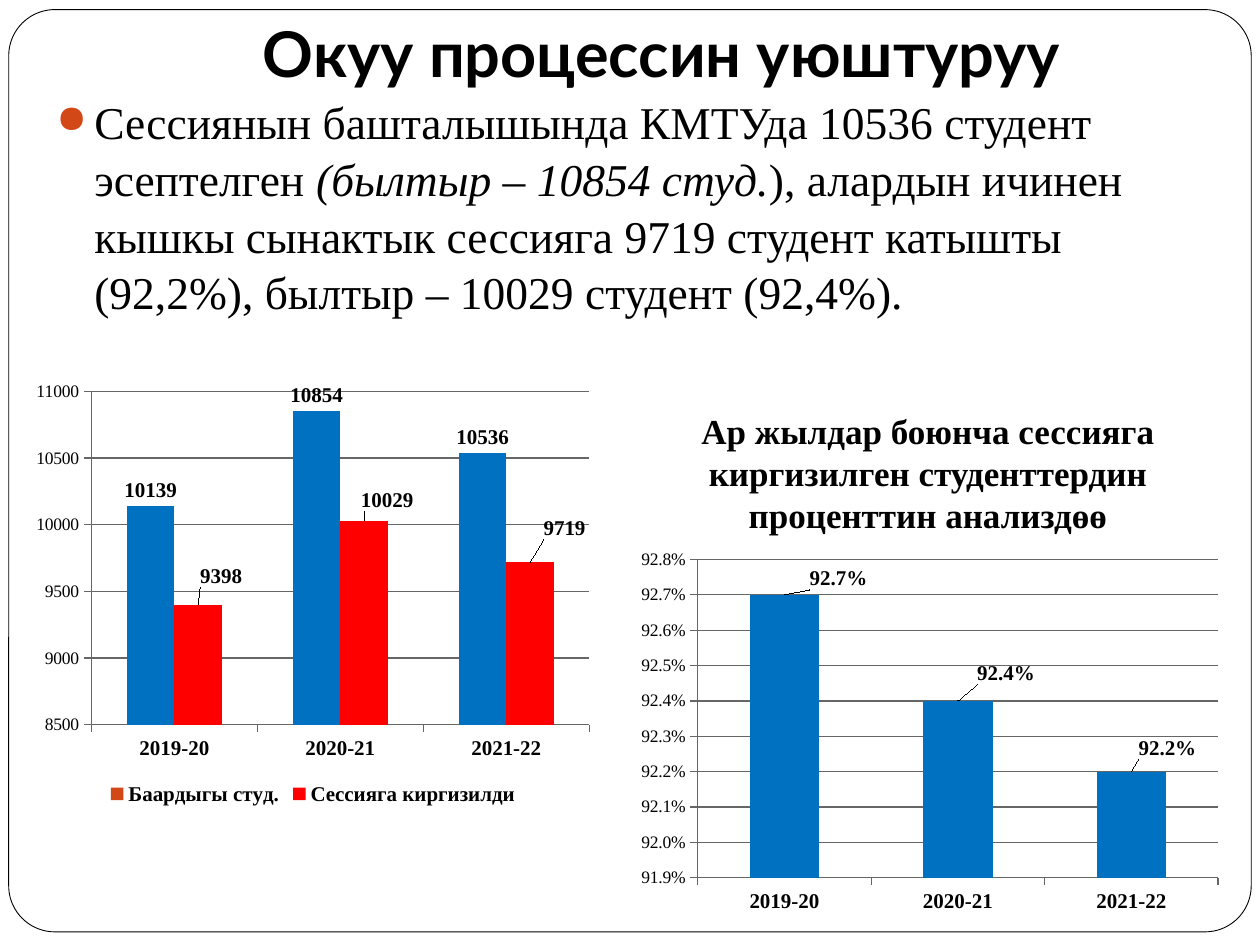
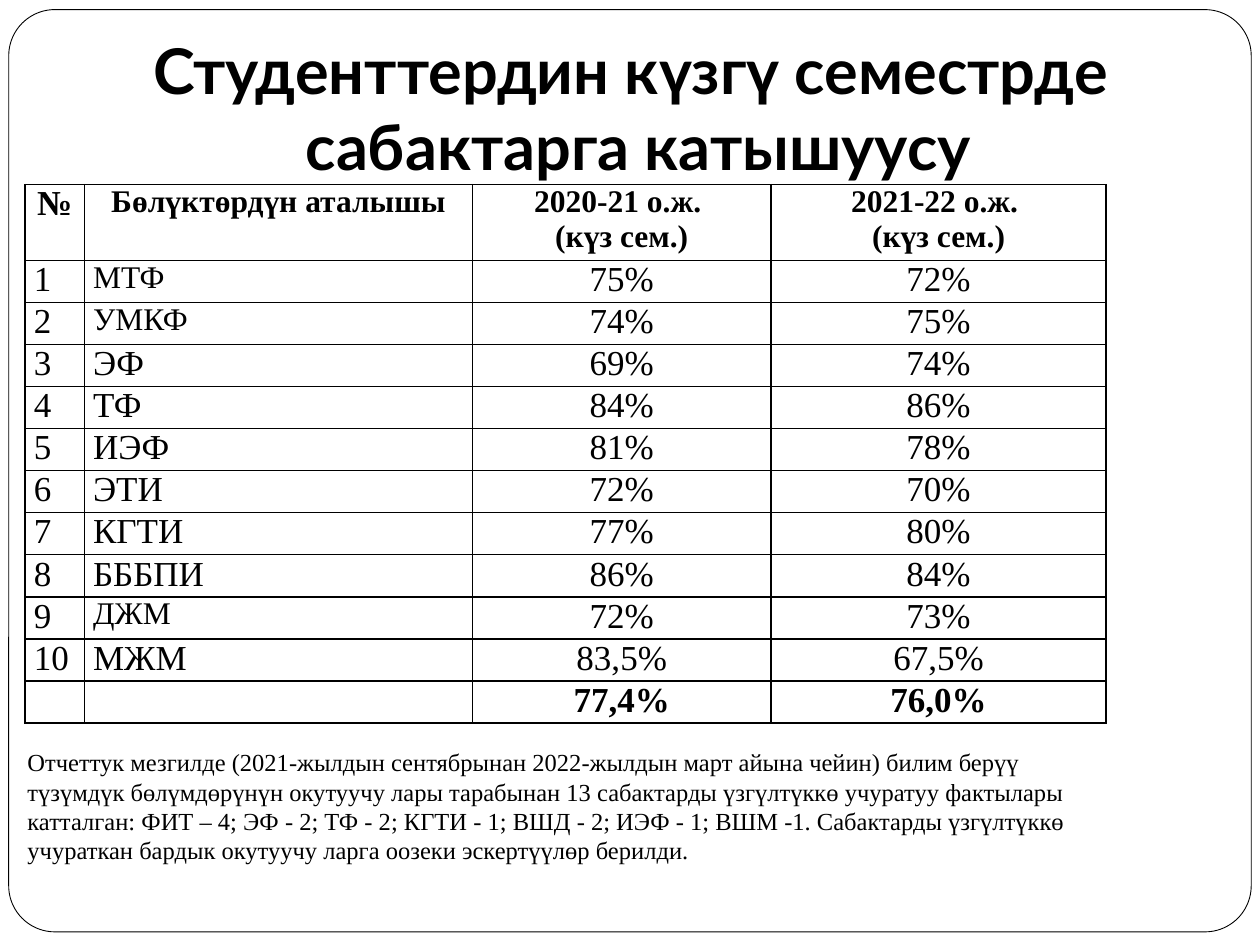
from lxml import etree
from pptx import Presentation
from pptx.chart.data import CategoryChartData
from pptx.dml.color import RGBColor
from pptx.enum.chart import XL_CHART_TYPE, XL_LABEL_POSITION, XL_LEGEND_POSITION, XL_TICK_MARK
from pptx.enum.shapes import MSO_SHAPE
from pptx.enum.text import MSO_ANCHOR, PP_ALIGN
from pptx.oxml import parse_xml
from pptx.oxml.ns import nsdecls, qn
from pptx.util import Pt

COLUMNS = XL_CHART_TYPE.COLUMN_CLUSTERED
ABOVE_BAR = XL_LABEL_POSITION.OUTSIDE_END
LEGEND_BOTTOM = XL_LEGEND_POSITION.BOTTOM
TICK_OUT, TICK_NONE = XL_TICK_MARK.OUTSIDE, XL_TICK_MARK.NONE
ROUNDED = MSO_SHAPE.ROUNDED_RECTANGLE
TOP, BOTTOM = MSO_ANCHOR.TOP, MSO_ANCHOR.BOTTOM
LEFT, CENTER, JUSTIFY = PP_ALIGN.LEFT, PP_ALIGN.CENTER, PP_ALIGN.JUSTIFY

BLACK = RGBColor(0x00, 0x00, 0x00)
WHITE = RGBColor(0xFF, 0xFF, 0xFF)
GREY = RGBColor(0x66, 0x66, 0x66)
BLUE = RGBColor(0x00, 0x70, 0xC0)
RED = RGBColor(0xFF, 0x00, 0x00)
ORANGE = RGBColor(0xD3, 0x48, 0x17)
TITLE_FONT, BODY_FONT = "Lato", "Times New Roman"

YEARS = ["2019-20", "2020-21", "2021-22"]
ATTENDANCE_COLUMNS = [33.84, 221.76, 170.64, 191.52]
ATTENDANCE_HEADER = ["№", "Бөлүктөрдүн аталышы", "2020-21 о.ж. \n(күз сем.)", "2021-22 о.ж. \n(күз сем.)"]
ATTENDANCE = [
    ("МТФ", "75%", "72%"),
    ("УМКФ", "74%", "75%"),
    ("ЭФ", "69%", "74%"),
    ("ТФ", "84%", "86%"),
    ("ИЭФ", "81%", "78%"),
    ("ЭТИ", "72%", "70%"),
    ("КГТИ", "77%", "80%"),
    ("БББПИ", "86%", "84%"),
    ("ДЖМ", "72%", "73%"),
    ("МЖМ", "83,5%", "67,5%"),
]
SMALLER_NAMES = {"МТФ", "УМКФ", "ДЖМ"}
AVERAGES = ["", "", "77,4%", "76,0%"]
NOTE = (
    "Отчеттук мезгилде (2021-жылдын сентябрынан 2022-жылдын март айына чейин) билим берүү\n"
    "түзүмдүк бөлүмдөрүнүн окутуучу лары тарабынан 13 сабактарды үзгүлтүккө учуратуу фактылары\n"
    "катталган: ФИТ – 4; ЭФ - 2; ТФ - 2; КГТИ - 1; ВШД - 2; ИЭФ - 1; ВШМ -1. Сабактарды үзгүлтүккө\n"
    "учураткан бардык окутуучу ларга оозеки эскертүүлөр берилди."
)


def set_font(font, size, bold=False, name=BODY_FONT):
    font.name, font.size, font.bold = name, Pt(size), bold
    font.color.rgb = BLACK


def format_text(frame, size, bold=False, align=LEFT, name=BODY_FONT):
    for para in frame.paragraphs:
        para.alignment = align
        set_font(para.font, size, bold, name)
        for span in para.runs:
            set_font(span.font, size, bold, name)


def add_text(page, place, text, size, bold=False, align=LEFT, name=BODY_FONT, anchor=TOP):
    frame = page.shapes.add_textbox(*map(Pt, place)).text_frame
    frame.word_wrap = True
    frame.vertical_anchor = anchor
    frame.text = text
    format_text(frame, size, bold, align, name)
    return frame


def add_page(deck, title, title_place):
    """Add a blank slide with the rounded frame and the title."""
    page = deck.slides.add_slide(deck.slide_layouts[6])
    border = page.shapes.add_shape(ROUNDED, Pt(5), Pt(5.5), Pt(710), Pt(527))
    border.adjustments[0] = 0.05
    border.shadow.inherit = False
    border.fill.solid()
    border.fill.fore_color.rgb = WHITE
    border.line.color.rgb = BLACK
    border.line.width = Pt(0.5)
    frame = add_text(page, title_place, title, 36, True, CENTER, TITLE_FONT, BOTTOM)
    frame.margin_bottom = Pt(7.2)
    return page


def add_bullet(para):
    props = para._p.get_or_add_pPr()
    props.set("marL", str(Pt(21.6)))
    props.set("indent", str(-Pt(21.6)))
    color = etree.SubElement(props, qn("a:buClr"))
    etree.SubElement(color, qn("a:srgbClr"), val=str(ORANGE))
    etree.SubElement(props, qn("a:buSzPct"), val="85000")
    etree.SubElement(props, qn("a:buChar"), char="●")


def add_session_summary(page):
    frame = add_text(page, (25.2, 49, 684, 150), "", 26)
    para = frame.paragraphs[0]
    para.space_before = Pt(5.8)
    para.line_spacing = 1.04
    pieces = [
        ("Сессиянын башталышында КМТУда 10536 студент эсептелген ", False),
        ("(былтыр – 10854 студ.", True),
        ("), алардын ичинен кышкы сынактык сессияга 9719 студент катышты "
         "(92,2%), былтыр – 10029 студент (92,4%).", False),
    ]
    for text, italic in pieces:
        span = para.add_run()
        span.text = text
        set_font(span.font, 26)
        span.font.italic = italic
    add_bullet(para)


def manual_layout(target="", **factors):
    """Build a c:layout element from fractions of the chart size."""
    parts = "".join(f'<c:{key} val="{value}"/>' for key, value in factors.items())
    return parse_xml(f'<c:layout {nsdecls("c")}><c:manualLayout>{target}{parts}</c:manualLayout></c:layout>')


def place_plot(chart, x, y, w, h):
    area = chart._chartSpace.chart.plotArea
    for old in area.findall(qn("c:layout")):
        area.remove(old)
    area.insert(0, manual_layout('<c:layoutTarget val="inner"/>',
                                 xMode="edge", yMode="edge", x=x, y=y, w=w, h=h))


def shift_labels(series, offsets):
    """Move each value label by a fraction of the chart size."""
    for index, (x, y) in enumerate(offsets):
        label = series.points[index].data_label
        set_font(label.font, 12, True)
        label.position = ABOVE_BAR
        element = series._element.find(qn("c:dLbls")).findall(qn("c:dLbl"))[index]
        element.find(qn("c:idx")).addnext(manual_layout(x=x, y=y))


def style_axes(chart, low, high, step, number_format):
    values, years = chart.value_axis, chart.category_axis
    values.minimum_scale, values.maximum_scale, values.major_unit = low, high, step
    values.tick_labels.number_format = number_format
    values.tick_labels.number_format_is_linked = False
    values.has_major_gridlines = True
    set_font(values.tick_labels.font, 10)
    set_font(years.tick_labels.font, 12, True)
    for axis in (values, years):
        axis.major_tick_mark, axis.minor_tick_mark = TICK_OUT, TICK_NONE
    for line in (values.format.line, years.format.line, values.major_gridlines.format.line):
        line.color.rgb = GREY
        line.width = Pt(0.75)


def add_column_chart(page, place, series_list, colors, scale, number_format, plot_place):
    data = CategoryChartData(number_format=number_format)
    data.categories = YEARS
    for name, values in series_list:
        data.add_series(name, values)
    chart = page.shapes.add_chart(COLUMNS, *map(Pt, place), data).chart
    set_font(chart.font, 10)
    chart.has_title = False
    chart.has_legend = False
    style_axes(chart, *scale, number_format)
    plot = chart.plots[0]
    plot.gap_width = 150
    plot.vary_by_categories = False
    for series, color in zip(plot.series, colors):
        series.format.fill.solid()
        series.format.fill.fore_color.rgb = color
        labels = series.data_labels
        labels.show_value = True
        labels.position = ABOVE_BAR
        labels.number_format = number_format
        labels.number_format_is_linked = False
        set_font(labels.font, 12, True)
    place_plot(chart, *plot_place)
    return chart


def add_student_chart(page):
    chart = add_column_chart(
        page, (14.4, 213, 329, 250),
        [("Баардыгы студ.", (10139, 10854, 10536)), ("Сессияга киргизилди", (9398, 10029, 9719))],
        (ORANGE, RED), (8500, 11000, 500), "General", (0.115, 0.043, 0.865, 0.762))
    everyone, admitted = chart.plots[0].series
    for index in range(len(YEARS)):
        fill = everyone.points[index].format.fill
        fill.solid()
        fill.fore_color.rgb = BLUE
    shift_labels(admitted, [(0.04, -0.03), (0.04, -0.01), (0.06, -0.04)])
    chart.has_legend = True
    chart.legend.position = LEGEND_BOTTOM
    chart.legend.include_in_layout = False
    set_font(chart.legend.font, 12, True)


def add_percent_chart(page):
    chart = add_column_chart(
        page, (360, 309.6, 343, 216), [("Series 1", (0.927, 0.924, 0.922))],
        (BLUE,), (0.919, 0.928, 0.001), "0.0%", (0.113, 0.047, 0.867, 0.842))
    shift_labels(chart.plots[0].series[0], [(0.09, 0), (0.08, -0.03), (0.06, -0.02)])


def add_borders(cell):
    props = cell._tc.get_or_add_tcPr()
    for index, side in enumerate(("lnL", "lnR", "lnT", "lnB")):
        props.insert(index, parse_xml(
            f'<a:{side} {nsdecls("a")} w="{Pt(1)}"><a:solidFill>'
            f'<a:srgbClr val="{BLACK}"/></a:solidFill></a:{side}>'))


def fill_cell(cell, text, size, bold, align):
    cell.text = text
    cell.margin_left = cell.margin_right = Pt(5)
    cell.margin_top = cell.margin_bottom = 0
    cell.fill.solid()
    cell.fill.fore_color.rgb = WHITE
    format_text(cell.text_frame, size, bold, align)
    add_borders(cell)


def add_attendance_table(page):
    rows = [ATTENDANCE_HEADER]
    rows += [(str(number), *row) for number, row in enumerate(ATTENDANCE, 1)]
    rows.append(AVERAGES)
    table = page.shapes.add_table(len(rows), len(ATTENDANCE_COLUMNS), Pt(14.4), Pt(105.5),
                                  Pt(sum(ATTENDANCE_COLUMNS)), Pt(284)).table
    table.first_row = table.horz_banding = False
    for column, width in zip(table.columns, ATTENDANCE_COLUMNS):
        column.width = Pt(width)
    last = len(rows) - 1
    for row_index, texts in enumerate(rows):
        table.rows[row_index].height = Pt(22.2 if row_index else 40)
        for column_index, text in enumerate(texts):
            header = row_index == 0
            smaller = text in SMALLER_NAMES or (header and column_index > 0) or not text
            align = CENTER if header else (JUSTIFY, LEFT, CENTER, CENTER)[column_index]
            fill_cell(table.cell(row_index, column_index), text, 18 if smaller else 20,
                      row_index in (0, last), align)


def main():
    deck = Presentation()
    deck.slide_width, deck.slide_height = Pt(720), Pt(540)

    session = add_page(deck, "Окуу процессин уюштуруу", (72, 3.6, 612, 55.4))
    add_session_summary(session)
    add_student_chart(session)
    add_percent_chart(session)
    add_text(session, (371.5, 230.4, 317.5, 80),
             "Ар жылдар боюнча сессияга киргизилген студенттердин проценттин анализдөө",
             20, True, CENTER)

    attendance = add_page(deck, "Студенттердин күзгү семестрде\v сабактарга катышуусу",
                          (14.4, 21.6, 692, 90))
    add_attendance_table(attendance)
    add_text(attendance, (8.6, 423.4, 711.4, 75), NOTE, 14)

    deck.save("out.pptx")


if __name__ == "__main__":
    main()
